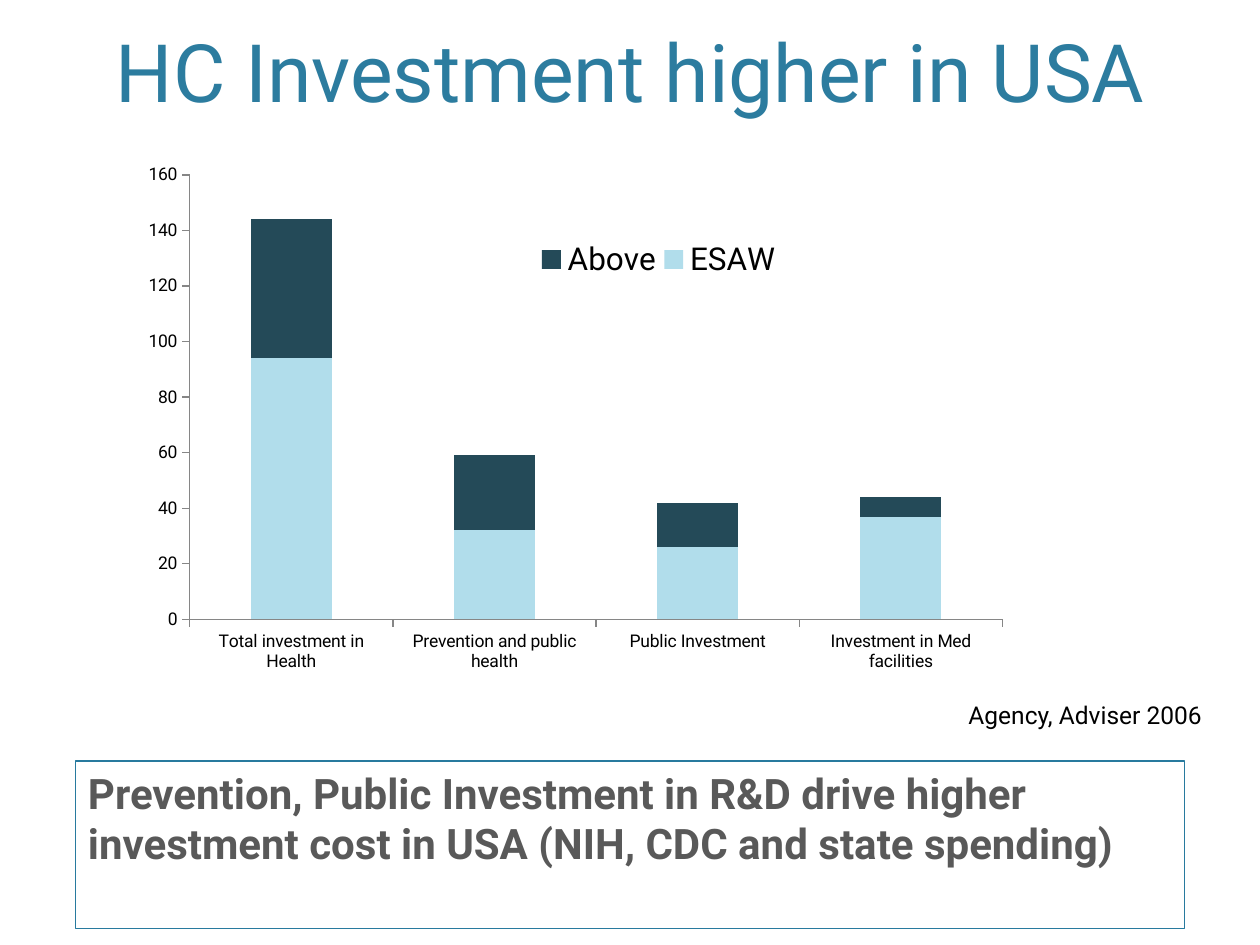
"""Build the slide on health care investment in the USA."""
from dataclasses import dataclass
from typing import Any

import pptx
import pptx.chart.data
import pptx.dml.color
import pptx.enum.chart
import pptx.enum.shapes
import pptx.enum.text
import pptx.oxml
import pptx.oxml.ns
import pptx.util

Inches = pptx.util.Inches
Pt = pptx.util.Pt
PP_ALIGN = pptx.enum.text.PP_ALIGN
MSO_ANCHOR = pptx.enum.text.MSO_ANCHOR


@dataclass(frozen=True)
class Theme:
    """Colours, font and type sizes of the slide."""
    font: str = "Roboto"
    title: str = "2C7C9F"
    border: str = "287A9E"
    body: str = "595959"
    text: str = "000000"
    axis: str = "868686"
    light: str = "B1DDEB"
    dark: str = "244A58"
    title_size: int = 46
    body_size: int = 24
    legend_size: int = 18
    source_size: int = 14
    axis_size: int = 10


@dataclass(frozen=True)
class Box:
    """Position and size in inches."""
    left: float
    top: float
    width: float
    height: float

    def lengths(self) -> tuple:
        """Return the four values as lengths."""
        return tuple(Inches(v) for v in (self.left, self.top, self.width, self.height))


@dataclass(frozen=True)
class Label:
    """A text with its place and format."""
    text: str
    box: Box
    size: int
    color: str
    align: Any
    anchor: Any = MSO_ANCHOR.TOP
    bold: bool = False
    wrap: bool = True


@dataclass(frozen=True)
class Series:
    """A named row of chart values."""
    name: str
    values: tuple
    color: str


THEME = Theme()
TITLE = Label("HC Investment higher in USA", Box(0.6, 0.12, 8.8, 0.87),
              THEME.title_size, THEME.title, PP_ALIGN.CENTER, MSO_ANCHOR.BOTTOM)
MESSAGE = Label("Prevention, Public Investment in R&D drive higher investment cost in USA "
                "(NIH, CDC and state spending)", Box(0.6, 6.04, 8.8, 1.33),
                THEME.body_size, THEME.body, PP_ALIGN.LEFT, bold=True)
SOURCE = Label("Agency, Adviser 2006", Box(6.28, 5.51, 3.36, 0.4),
               THEME.source_size, THEME.text, PP_ALIGN.RIGHT, wrap=False)
CHART_BOX = Box(1.01, 1.22, 8.27, 4.2)
CATEGORIES = ("Total investment in Health", "Prevention and public health",
              "Public Investment", "Investment in Med facilities")
SERIES = (Series("ESAW", (94, 32, 26, 37), THEME.light),
          Series("Above", (50, 27, 16, 7), THEME.dark))


def rgb(color: str) -> Any:
    """Turn a hex string into a colour."""
    return pptx.dml.color.RGBColor.from_string(color)


def set_attrs(target: Any, values: dict) -> None:
    """Set each named attribute on the target."""
    for name, value in values.items():
        setattr(target, name, value)


def set_font(font: Any, size: int, color: str, bold: bool = False) -> None:
    """Apply the theme font with a size and colour."""
    set_attrs(font, {"name": THEME.font, "size": Pt(size), "bold": bold})
    font.color.rgb = rgb(color)


def write_label(sp: Any, label: Label) -> None:
    """Place a shape and write its label."""
    set_attrs(sp, dict(zip(("left", "top", "width", "height"), label.box.lengths())))
    tf = sp.text_frame
    set_attrs(tf, {"word_wrap": label.wrap, "vertical_anchor": label.anchor,
                   "auto_size": pptx.enum.text.MSO_AUTO_SIZE.NONE})
    p = tf.paragraphs[0]
    p.alignment = label.align
    r = p.add_run()
    r.text = label.text
    set_font(r.font, label.size, label.color, label.bold)


def manual_layout(box: Box, inner: bool = False) -> Any:
    """Make a chart layout from fractions of the chart area."""
    target = '<c:layoutTarget val="inner"/>' if inner else ""
    return pptx.oxml.parse_xml(
        f'<c:layout {pptx.oxml.ns.nsdecls("c")}><c:manualLayout>{target}'
        '<c:xMode val="edge"/><c:yMode val="edge"/>'
        f'<c:x val="{box.left}"/><c:y val="{box.top}"/>'
        f'<c:w val="{box.width}"/><c:h val="{box.height}"/></c:manualLayout></c:layout>')


def add_investment_chart(s: Any) -> None:
    """Add the stacked column chart."""
    data = pptx.chart.data.CategoryChartData()
    data.categories = CATEGORIES
    for series in SERIES:
        data.add_series(series.name, series.values)
    xl = pptx.enum.chart
    chart = s.shapes.add_chart(xl.XL_CHART_TYPE.COLUMN_STACKED, *CHART_BOX.lengths(), data).chart
    set_attrs(chart, {"has_title": False, "has_legend": True})
    set_font(chart.font, THEME.axis_size, THEME.text)
    plot = chart.plots[0]
    set_attrs(plot, {"gap_width": 150, "overlap": 100, "vary_by_categories": False})
    for drawn, series in zip(plot.series, SERIES):
        drawn.format.fill.solid()
        drawn.format.fill.fore_color.rgb = rgb(series.color)
    for axis in (chart.category_axis, chart.value_axis):
        set_attrs(axis, {"has_major_gridlines": False,
                         "major_tick_mark": xl.XL_TICK_MARK.OUTSIDE,
                         "minor_tick_mark": xl.XL_TICK_MARK.NONE})
        axis.format.line.color.rgb = rgb(THEME.axis)
        axis.format.line.width = Pt(0.75)
    set_attrs(chart.value_axis, {"minimum_scale": 0, "maximum_scale": 160, "major_unit": 20})
    legend = chart.legend
    set_attrs(legend, {"position": xl.XL_LEGEND_POSITION.RIGHT, "include_in_layout": False})
    set_font(legend.font, THEME.legend_size, THEME.text)
    area = chart.element.find(".//" + pptx.oxml.ns.qn("c:plotArea"))
    key = chart.element.find(".//" + pptx.oxml.ns.qn("c:legend"))
    for parent, index, layout in (
            (area, 0, manual_layout(Box(0.06, 0.04, 0.78, 0.84), inner=True)),
            (key, 1, manual_layout(Box(0.39, 0.15, 0.24, 0.1)))):
        for old in parent.findall(pptx.oxml.ns.qn("c:layout")):
            parent.remove(old)
        parent.insert(index, layout)


def main() -> None:
    """Build and save the slide."""
    prs = pptx.Presentation()
    set_attrs(prs, {"slide_width": Inches(10), "slide_height": Inches(7.5)})
    s = prs.slides.add_slide(prs.slide_layouts[5])
    write_label(s.shapes.title, TITLE)
    message = s.shapes.add_shape(pptx.enum.shapes.MSO_SHAPE.RECTANGLE, *MESSAGE.box.lengths())
    message.shadow.inherit = False
    message.fill.background()
    message.line.color.rgb = rgb(THEME.border)
    message.line.width = Pt(0.75)
    write_label(message, MESSAGE)
    add_investment_chart(s)
    write_label(s.shapes.add_textbox(*SOURCE.box.lengths()), SOURCE)
    prs.save("out.pptx")


if __name__ == "__main__":
    main()
